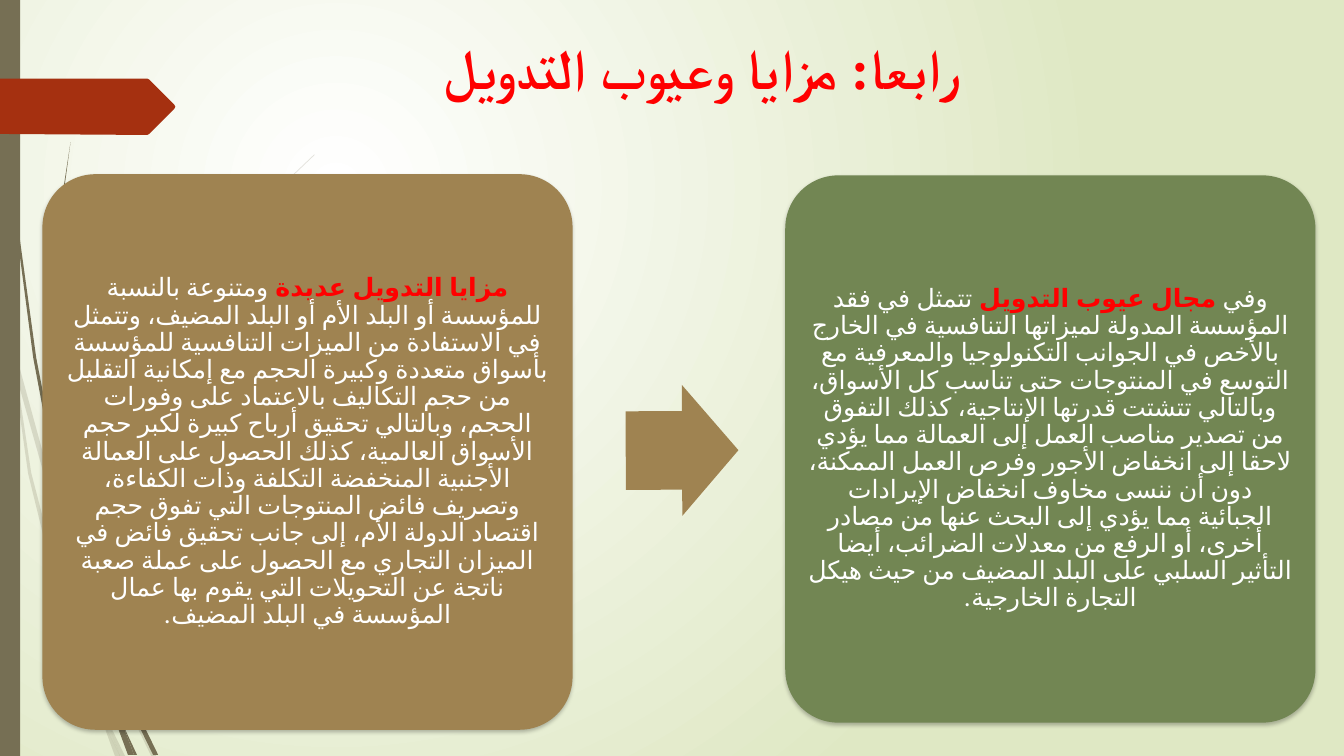
from pptx import Presentation
from pptx.dml.color import RGBColor
from pptx.enum.lang import MSO_LANGUAGE_ID as LANGUAGE
from pptx.enum.shapes import MSO_SHAPE as SHAPE
from pptx.enum.text import MSO_ANCHOR as ANCHOR, MSO_AUTO_SIZE as AUTO_SIZE, PP_ALIGN as ALIGN
from pptx.oxml import parse_xml
from pptx.oxml.ns import nsdecls, qn
from pptx.util import Cm, Pt

WHITE = RGBColor(0xFF, 0xFF, 0xFF)
PALE_GREEN = RGBColor(0xDF, 0xE8, 0xC4)
OLIVE = RGBColor(0x76, 0x6F, 0x54)
RUST = RGBColor(0xA5, 0x30, 0x10)
RED = RGBColor(0xFF, 0x00, 0x00)
TAN = RGBColor(0x9F, 0x83, 0x51)
GREEN = RGBColor(0x72, 0x86, 0x53)

TITLE_FONT = "Times New Roman"
CARD_FONT = "League Spartan"
GRASS_UNIT = Cm(0.0254)

PALE_BLADES = [
    [(58, 522), (84, 599), (85, 586), (62, 520), (14, 345), (17, 376)],
    [(92, 607), (88, 596), (88, 610), (123, 694), (150, 750), (155, 750), (127, 692)],
    [(119, 750), (124, 750), (105, 711)],
    [(93, 683), (70, 619), (31, 469), (17, 376), (11, 350), (28, 470), (65, 621),
     (92, 693), (101, 714), (99, 707)],
    [(88, 584), (110, 462), (160, 349), (229, 245), (268, 198), (290, 175), (312, 154),
     (312, 153), (289, 175), (268, 197), (228, 244), (158, 348), (107, 461), (85, 584),
     (85, 586), (88, 596)],
    [(101, 714), (114, 750), (119, 750)],
    [(96, 692), (93, 683), (99, 707), (101, 714), (119, 750), (105, 711)],
]
DARK_BLADES = [
    [(7, 110), (17, 233), (33, 355), (56, 477), (57, 481), (55, 457), (55, 453), (36, 355),
     (19, 232), (8, 109), (5, 48), (4, 0), (3, 0), (4, 48)],
    [(113, 649), (110, 641), (111, 656), (132, 708), (152, 749), (157, 749), (136, 706)],
    [(60, 472), (58, 453), (54, 349), (58, 245), (63, 193), (70, 141), (62, 193), (56, 245),
     (52, 349), (55, 449)],
    [(133, 749), (136, 749), (122, 719)],
    [(117, 722), (127, 749), (131, 749)],
    [(116, 706), (110, 691), (116, 717), (117, 722), (130, 749), (133, 749), (122, 719)],
]
TAG_OUTLINE = [(0, 0), (146, 0), (148, 1), (173, 26), (174, 28), (173, 30), (148, 55),
               (146, 56), (0, 55)]

ADVANTAGES = [
    ("مزايا التدويل عديدة ", RED, True),
    ("ومتنوعة بالنسبة للمؤسسة أو البلد الأم أو البلد المضيف، وتتمثل في الاستفادة من الميزات "
     "التنافسية للمؤسسة بأسواق متعددة وكبيرة الحجم مع إمكانية التقليل من حجم التكاليف بالاعتماد "
     "على وفورات الحجم، وبالتالي تحقيق أرباح كبيرة لكبر حجم الأسواق العالمية، كذلك الحصول على "
     "العمالة الأجنبية المنخفضة التكلفة وذات الكفاءة، وتصريف فائض المنتوجات التي تفوق حجم اقتصاد "
     "الدولة الأم، إلى جانب تحقيق فائض في الميزان التجاري مع الحصول على عملة صعبة ناتجة عن "
     "التحويلات التي يقوم بها عمال المؤسسة في البلد المضيف.", WHITE, False),
]
DRAWBACKS = [
    ("وفي ", WHITE, False),
    ("مجال عيوب التدويل ", RED, True),
    ("تتمثل في فقد المؤسسة المدولة لميزاتها التنافسية في الخارج بالأخص في الجوانب التكنولوجيا "
     "والمعرفية مع التوسع في المنتوجات حتى تناسب كل الأسواق، وبالتالي تتشتت قدرتها الإنتاجية، "
     "كذلك التفوق من تصدير مناصب العمل إلى العمالة مما يؤدي لاحقا إلى انخفاض الأجور وفرص العمل "
     "الممكنة، دون أن ننسى مخاوف انخفاض الإيرادات الجبائية مما يؤدي إلى البحث عنها من مصادر "
     "أخرى، أو الرفع من معدلات الضرائب، أيضا التأثير السلبي على البلد المضيف من حيث هيكل التجارة "
     "الخارجية.", WHITE, False),
]


def add_text(paragraph, text, *, font, size, color, bold=False):
    """Append one formatted Arabic run, with its font also set for complex script."""
    run = paragraph.add_run()
    run.text = text
    run.font.name = font
    run.font.size = Pt(size)
    run.font.bold = bold
    run.font.color.rgb = color
    run.font.language_id = LANGUAGE.ARABIC_ALGERIA
    run.font._element.append(parse_xml(f'<a:cs {nsdecls("a")} typeface="{font}"/>'))


def set_rtl(paragraph, line_spacing):
    """Centre a right-to-left paragraph."""
    paragraph.alignment = ALIGN.CENTER
    paragraph.line_spacing = line_spacing
    paragraph._p.get_or_add_pPr().set("rtl", "1")


def paint(shape, color):
    """Give a shape a plain fill with no line or shadow."""
    shape.shadow.inherit = False
    shape.fill.solid()
    shape.fill.fore_color.rgb = color
    shape.line.fill.background()


def add_outline(slide, left, top, points, color, opacity=100):
    """Draw a closed outline whose points start from the given corner."""
    builder = slide.shapes.build_freeform(*points[0], scale=GRASS_UNIT)
    builder.add_line_segments(points[1:])
    outline = builder.convert_to_shape(left, top)
    paint(outline, color)
    if opacity < 100:
        rgb = outline._element.spPr.find(".//" + qn("a:srgbClr"))
        rgb.append(parse_xml(f'<a:alpha {nsdecls("a")} val="{opacity * 1000}"/>'))


def add_backdrop(slide):
    """Fill the background with a round gradient from white to pale green."""
    fill = slide.background.fill
    fill.gradient()
    for stop, color in zip(fill.gradient_stops, (WHITE, PALE_GREEN)):
        stop.color.rgb = color
    gradient = slide.element.find(".//" + qn("a:gradFill"))
    gradient.remove(gradient.find(qn("a:lin")))
    gradient.append(parse_xml(
        f'<a:path {nsdecls("a")} path="circle">'
        '<a:fillToRect l="50000" t="50000" r="100000" b="100000"/></a:path>'))


def add_left_edge(slide, left, top, height):
    """Draw the grass, the side bar and the pointed tag."""
    for blade in PALE_BLADES:
        add_outline(slide, left, top, blade, OLIVE, opacity=20)
    for blade in DARK_BLADES:
        add_outline(slide, left, top, blade, OLIVE)
    side_bar = slide.shapes.add_shape(SHAPE.RECTANGLE, left, top, Cm(0.51), height)
    paint(side_bar, OLIVE)
    add_outline(slide, left, top + Cm(1.98), TAG_OUTLINE, RUST)


def add_title(slide, left, top, width, height):
    """Place and format the slide title."""
    title = slide.shapes.title
    title.left, title.top, title.width, title.height = left, top, width, height
    frame = title.text_frame
    frame.auto_size = AUTO_SIZE.NONE
    frame.vertical_anchor = ANCHOR.TOP
    set_rtl(frame.paragraphs[0], 1.2)
    add_text(frame.paragraphs[0], "رابعا: مزايا وعيوب التدويل",
             font=TITLE_FONT, size=40, color=RED, bold=True)


def add_card(slide, left, top, width, height, color, passages):
    """Draw a rounded card with a soft shadow and its passages."""
    card = slide.shapes.add_shape(SHAPE.ROUNDED_RECTANGLE, left, top, width, height)
    card.adjustments[0] = 0.1
    paint(card, color)
    card._element.spPr.find(qn("a:effectLst")).append(parse_xml(
        f'<a:outerShdw {nsdecls("a")} blurRad="{Pt(3)}" dist="{Pt(2)}" dir="5400000" '
        'rotWithShape="0"><a:srgbClr val="000000"><a:alpha val="25000"/></a:srgbClr>'
        '</a:outerShdw>'))
    frame = card.text_frame
    frame.word_wrap = True
    frame.vertical_anchor = ANCHOR.MIDDLE
    frame.margin_left = frame.margin_right = frame.margin_top = frame.margin_bottom = Cm(0.18)
    set_rtl(frame.paragraphs[0], 0.9)
    for text, text_color, bold in passages:
        add_text(frame.paragraphs[0], text, font=CARD_FONT, size=18,
                 color=text_color, bold=bold)


def add_step_arrow(slide, left, top, width, height):
    """Draw the arrow between the cards."""
    arrow = slide.shapes.add_shape(SHAPE.RIGHT_ARROW, left, top, width, height)
    arrow.adjustments[0] = 0.6
    arrow.adjustments[1] = 0.5
    arrow.rotation = 359.8
    paint(arrow, TAN)


def main():
    """Build the slide and save it."""
    deck = Presentation()
    deck.slide_width, deck.slide_height = Cm(33.87), Cm(19.05)
    slide = deck.slides.add_slide(deck.slide_layouts[5])
    add_backdrop(slide)
    add_left_edge(slide, Cm(0), Cm(0), deck.slide_height)
    add_title(slide, Cm(3.86), Cm(0.38), Cm(27.51), Cm(3.05))
    add_card(slide, Cm(1.07), Cm(4.39), Cm(13.36), Cm(14), TAN, ADVANTAGES)
    add_step_arrow(slide, Cm(15.77), Cm(9.7), Cm(2.84), Cm(3.3))
    add_card(slide, Cm(19.79), Cm(4.42), Cm(13.36), Cm(13.79), GREEN, DRAWBACKS)
    deck.save("out.pptx")


if __name__ == "__main__":
    main()
